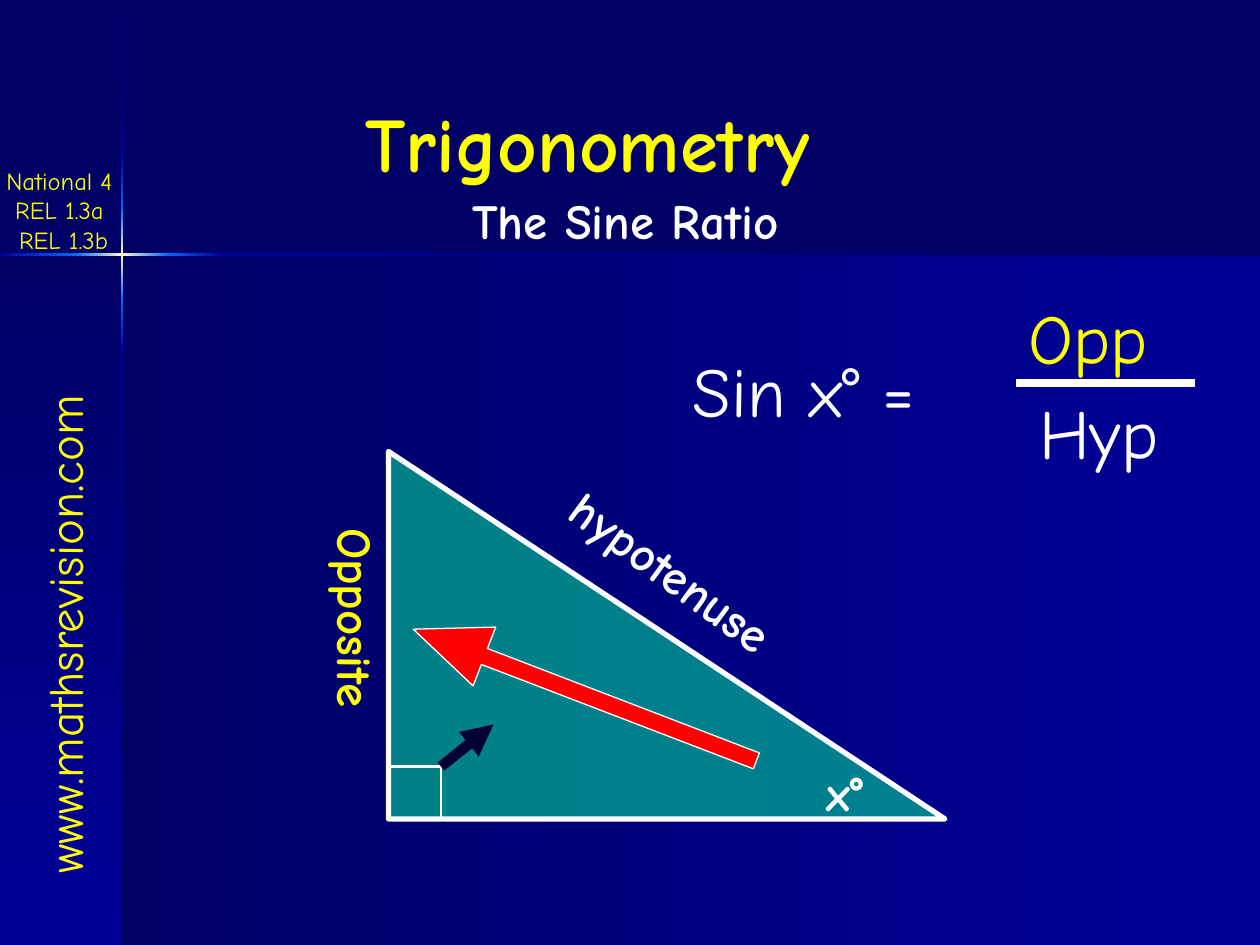
from dataclasses import dataclass
from itertools import pairwise

from lxml.etree import SubElement
from pptx import Presentation
from pptx.dml.color import RGBColor
from pptx.enum.shapes import MSO_CONNECTOR as Connector, MSO_SHAPE as Shape
from pptx.enum.text import MSO_ANCHOR as Anchor, MSO_AUTO_SIZE as AutoSize, PP_ALIGN as Align
from pptx.oxml import parse_xml
from pptx.oxml.ns import nsdecls, qn
from pptx.util import Inches, Pt

COLUMNS, ROWS = 120, 90  # one cell is a twelfth of an inch


@dataclass(frozen=True)
class Theme:
    font: str = "Comic Neue"
    navy: str = "000066"
    blue: str = "000099"
    bright: str = "0066FF"
    cream: str = "FFFFCC"
    ink: str = "000033"
    white: str = "FFFFFF"
    yellow: str = "FFFF00"
    green: str = "00FF99"
    red: str = "FF0000"
    heading: int = 44
    formula: int = 40
    label: int = 28
    note: int = 14


class SlideBuilder:
    def __init__(self, deck, theme):
        self.theme = theme
        self.cell_width = deck.slide_width / COLUMNS
        self.cell_height = deck.slide_height / ROWS
        self.slide = deck.slides.add_slide(deck.slide_layouts[5])
        self.shapes = self.slide.shapes
        background = self.slide.background.fill
        background.solid()
        background.fore_color.rgb = RGBColor.from_string(theme.navy)

    def point(self, column, row):
        return round(column * self.cell_width), round(row * self.cell_height)

    def frame(self, left, top, width, height):
        return *self.point(left, top), *self.point(width, height)

    def set_text(self, box, text, size, color, bold=False, align=Align.LEFT):
        box.text_frame.text = text
        for paragraph in box.text_frame.paragraphs:
            paragraph.alignment = align
            font = paragraph.runs[0].font
            font.name, font.size, font.bold = self.theme.font, Pt(size), bold
            font.color.rgb = RGBColor.from_string(color)

    def title(self, place, text):
        title = self.shapes.title
        title.left, title.top, title.width, title.height = self.frame(*place)
        title.text_frame.vertical_anchor = Anchor.TOP
        title.text_frame.auto_size = AutoSize.NONE
        self.set_text(title, text, self.theme.label, self.theme.white, True, Align.CENTER)

    def text(self, place, text, size, color, bold=False, align=Align.LEFT,
             wrap=True, rotation=0, anchor=Anchor.TOP, upright=True):
        box = self.shapes.add_textbox(*self.frame(*place))
        box.rotation = rotation
        body = box.text_frame
        body.word_wrap, body.vertical_anchor = wrap, anchor
        body.auto_size = AutoSize.SHAPE_TO_FIT_TEXT
        if not upright:
            box.element.txBody.find(qn("a:bodyPr")).set("vert", "eaVert")
            body.margin_left = body.margin_right = Inches(0.05)
            body.margin_top = body.margin_bottom = Inches(0.1)
        self.set_text(box, text, size, color, bold, align)

    def shape(self, kind, place, fill=None, line_width=0, opacity=100, rotation=0):
        shape = self.shapes.add_shape(kind, *self.frame(*place))
        shape.shadow.inherit = False
        shape.rotation = rotation
        if fill:
            shape.fill.solid()
            shape.fill.fore_color.rgb = RGBColor.from_string(fill)
            if opacity < 100:
                color = shape.element.spPr.find(qn("a:solidFill"))[0]
                SubElement(color, qn("a:alpha"), val=str(opacity * 1000))
        else:
            shape.fill.background()
        if line_width:
            shape.line.color.rgb = RGBColor.from_string(self.theme.white)
            shape.line.width = Pt(line_width)
        else:
            shape.line.fill.background()
        return shape

    def gradient(self, place, colors, downward):
        """Rectangle with evenly spaced colours, running right or down."""
        properties = self.shape(Shape.RECTANGLE, place).element.spPr
        stops = "".join(
            f'<a:gs pos="{i * 100000 // (len(colors) - 1)}"><a:srgbClr val="{color}"/></a:gs>'
            for i, color in enumerate(colors))
        angle = 5400000 if downward else 0
        properties.replace(properties.find(qn("a:noFill")), parse_xml(
            f'<a:gradFill {nsdecls("a")} rotWithShape="1"><a:gsLst>{stops}</a:gsLst>'
            f'<a:lin ang="{angle}" scaled="0"/></a:gradFill>'))

    def line(self, start, end, color, width, arrow=False):
        line = self.shapes.add_connector(
            Connector.STRAIGHT, *self.point(*start), *self.point(*end))
        line.line.color.rgb = RGBColor.from_string(color)
        line.line.width = Pt(width)
        properties = line.element.spPr
        if arrow:
            SubElement(properties.find(qn("a:ln")), qn("a:tailEnd"), type="triangle")
        SubElement(properties, qn("a:effectLst"))


def draw_backdrop(page, theme):
    cross_x, cross_y, thickness = 11.64, 24.24, 0.24
    fade = [theme.navy, theme.blue]
    page.gradient((cross_x, cross_y, COLUMNS - cross_x, ROWS - cross_y), fade, False)
    page.gradient((0, cross_y, cross_x, ROWS - cross_y), fade, True)

    glow = [fade, [theme.blue, theme.bright], [theme.bright, theme.cream, theme.bright],
            [theme.bright, theme.blue], fade[::-1]]
    for (top, bottom), colors in zip(pairwise([0, 14.5, 19.8, 28.6, 33.8, ROWS]), glow):
        page.gradient((cross_x - thickness / 2, top, thickness, bottom - top), colors, True)
    for (left, right), colors in zip(pairwise([0, 7.2, 16, 21.2, COLUMNS]), glow[1:]):
        page.gradient((left, cross_y - thickness / 2, right - left, thickness), colors, False)


def draw_headings(page, theme):
    page.text((-20.3, 54.6, 52.7, 6.8), "www.mathsrevision.com", theme.label, theme.yellow,
              wrap=False, rotation=270)
    page.text((33.6, 8.5, 49.3, 10.1), "Trigonometry", theme.heading, theme.yellow, bold=True)
    page.title((29.8, 17.5, 59.5, 7.6), "The Sine Ratio")
    page.text((-1.1, 15.2, 14.3, 9.6), "National 4 \nREL 1.3a \nREL 1.3b", theme.note,
              theme.yellow, align=Align.CENTER, wrap=False)


def draw_triangle(page, theme):
    left, top, width, height, corner = 37, 43, 53, 35, 5
    base = top + height
    label = dict(size=theme.label, bold=True, align=Align.CENTER)
    page.shape(Shape.RIGHT_TRIANGLE, (left, top, width, height), theme.green, 3, opacity=50)
    page.text((76.5, 72, 8, 6.8), "x°", color=theme.white, wrap=False,
              anchor=Anchor.MIDDLE, **label)
    page.shape(Shape.RECTANGLE, (left, base - corner, corner, corner), line_width=1.5)
    pointer = page.shape(Shape.LEFT_ARROW, (38.2, 63.2, 35, 6), theme.red, 0.75, rotation=21)
    pointer.adjustments[0], pointer.adjustments[1] = 0.27, 1.21
    page.text((30, 49.1, 8, 20.8), "Opposite", color=theme.yellow, wrap=False,
              anchor=Anchor.MIDDLE, upright=False, **label)
    page.text((47, 51, 34, 6.8), "hypotenuse", color=theme.white, rotation=36.1, **label)
    page.line((left + corner, base - corner), (left + 2 * corner, 69), theme.ink, 6, arrow=True)


def draw_formula(page, theme):
    page.text((64.8, 32.5, 29, 9.2), "Sin x° =", theme.formula, theme.white)
    page.line((96.8, 36.5), (113.8, 36.5), theme.white, 4.5)
    page.text((96.8, 27.5, 15, 9.2), "Opp", theme.formula, theme.yellow)
    page.text((97.8, 36.5, 17, 9.2), "Hyp", theme.formula, theme.white)


def main():
    deck = Presentation()
    deck.slide_width, deck.slide_height = Inches(10), Inches(7.5)
    theme = Theme()
    page = SlideBuilder(deck, theme)
    for draw in (draw_backdrop, draw_headings, draw_triangle, draw_formula):
        draw(page, theme)
    # The title placeholder comes first in the layout; lift it above the backdrop.
    title = page.shapes.title.element
    title.getparent().append(title)
    deck.save("out.pptx")


if __name__ == "__main__":
    main()
